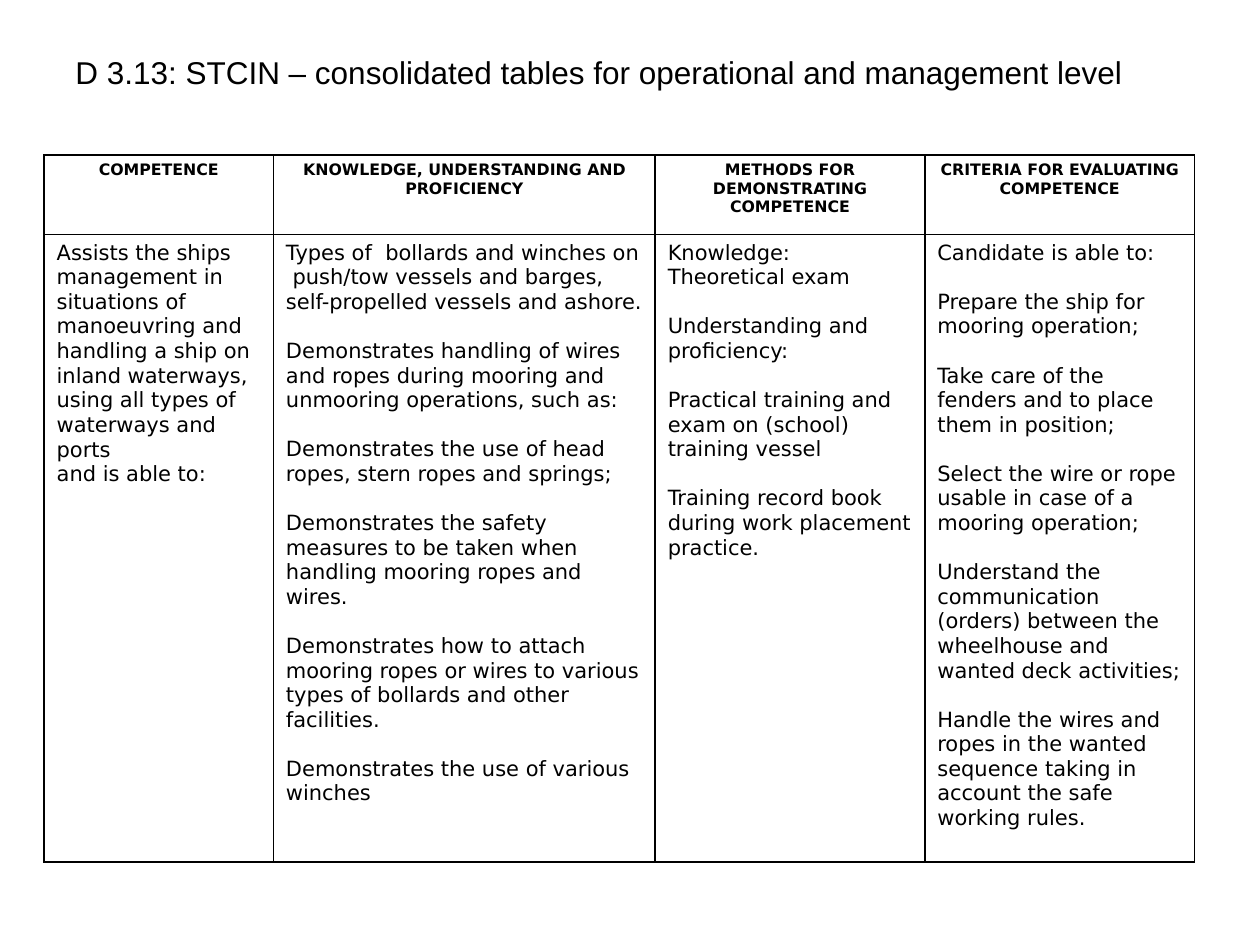
from lxml import etree
from pptx import Presentation, util as u
from pptx.dml.color import RGBColor
from pptx.enum import text
from pptx.oxml.ns import qn

# Content: each column has a heading, a width and blocks of lines set apart by a gap
TITLE = "D 3.13: STCIN – consolidated tables for operational and management level"
COLUMNS = [
    ("COMPETENCE", 1.82, [
        ["Assists the ships management in",
         "situations of manoeuvring and",
         "handling a ship on inland waterways,",
         "using all types of waterways and ports",
         "and is able to:"],
    ]),
    ("KNOWLEDGE, UNDERSTANDING AND PROFICIENCY", 3.03, [
        ["Types of  bollards and winches on  push/tow vessels and barges, "
         "self-propelled vessels and ashore."],
        ["Demonstrates handling of wires and ropes during mooring and "
         "unmooring operations, such as:"],
        ["Demonstrates the use of head ropes, stern ropes and springs;"],
        ["Demonstrates the safety measures to be taken when handling "
         "mooring ropes and wires."],
        ["Demonstrates how to attach mooring ropes or wires to various "
         "types of bollards and other facilities."],
        ["Demonstrates the use of various winches"],
    ]),
    ("METHODS FOR DEMONSTRATING COMPETENCE", 2.14, [
        ["Knowledge:", "Theoretical exam"],
        ["Understanding and proficiency:"],
        ["Practical training and exam on (school) training vessel"],
        ["Training record book during work placement practice."],
    ]),
    ("CRITERIA FOR EVALUATING COMPETENCE", 2.14, [
        ["Candidate is able to:"],
        ["Prepare the ship for mooring operation;"],
        ["Take care of the fenders and to place them in position;"],
        ["Select the wire or rope usable in case of a mooring operation;"],
        ["Understand the communication (orders) between the wheelhouse "
         "and wanted deck activities;"],
        ["Handle the wires and ropes in the wanted sequence taking in "
         "account the safe working rules."],
    ]),
]
ROW_HEIGHTS = [0.63, 4.98]
LEFT, TOP = 0.35, 1.23
BLOCK_GAP = 14
INK = "000000"


def color(value):
    return RGBColor.from_string(value)


def style(paragraph, size, face, bold=False):
    font = paragraph.font
    for part in [font] + [run.font for run in paragraph.runs]:
        part.size, part.name, part.bold = u.Pt(size), face, bold
        part.color.rgb = color(INK)


def fill_cell(cell, blocks, size, bold=False, align=text.PP_ALIGN.LEFT):
    lines = [(line, number > 0 and line is block[0])
             for number, block in enumerate(blocks) for line in block]
    cell.text_frame.text = "\n".join(line for line, _ in lines)
    for paragraph, (_, gap) in zip(cell.text_frame.paragraphs, lines):
        paragraph.alignment = align
        if gap:
            paragraph.space_before = u.Pt(BLOCK_GAP)
        style(paragraph, size, "DejaVu Sans", bold)


def frame_cell(cell):
    cell.fill.background()
    properties = cell._tc.get_or_add_tcPr()
    for position, side in enumerate(("lnL", "lnR", "lnT", "lnB")):
        line = etree.Element(qn("a:" + side), w=str(u.Pt(1)))
        solid = etree.SubElement(line, qn("a:solidFill"))
        etree.SubElement(solid, qn("a:srgbClr"), val=INK)
        properties.insert(position, line)


deck = Presentation()
deck.slide_width, deck.slide_height = u.Inches(10), u.Inches(7.5)
slide = deck.slides.add_slide(deck.slide_layouts[6])

# Competence table
widths = [width for _, width, _ in COLUMNS]
table = slide.shapes.add_table(
    len(ROW_HEIGHTS), len(COLUMNS), u.Inches(LEFT), u.Inches(TOP),
    u.Inches(sum(widths)), u.Inches(sum(ROW_HEIGHTS))).table
table.first_row = table.horz_banding = False
for row, height in zip(table.rows, ROW_HEIGHTS):
    row.height = u.Inches(height)
for index, (heading, width, blocks) in enumerate(COLUMNS):
    table.columns[index].width = u.Inches(width)
    fill_cell(table.cell(0, index), [[heading]], 9, True, text.PP_ALIGN.CENTER)
    fill_cell(table.cell(1, index), blocks, 12)
for cell in table.iter_cells():
    frame_cell(cell)

# Title
title = slide.shapes.add_textbox(
    u.Inches(0.5), u.Inches(0.37), u.Inches(9), u.Inches(0.4)).text_frame
title.word_wrap = True
title.text = TITLE
style(title.paragraphs[0], 18, "Arial")

deck.save("out.pptx")
